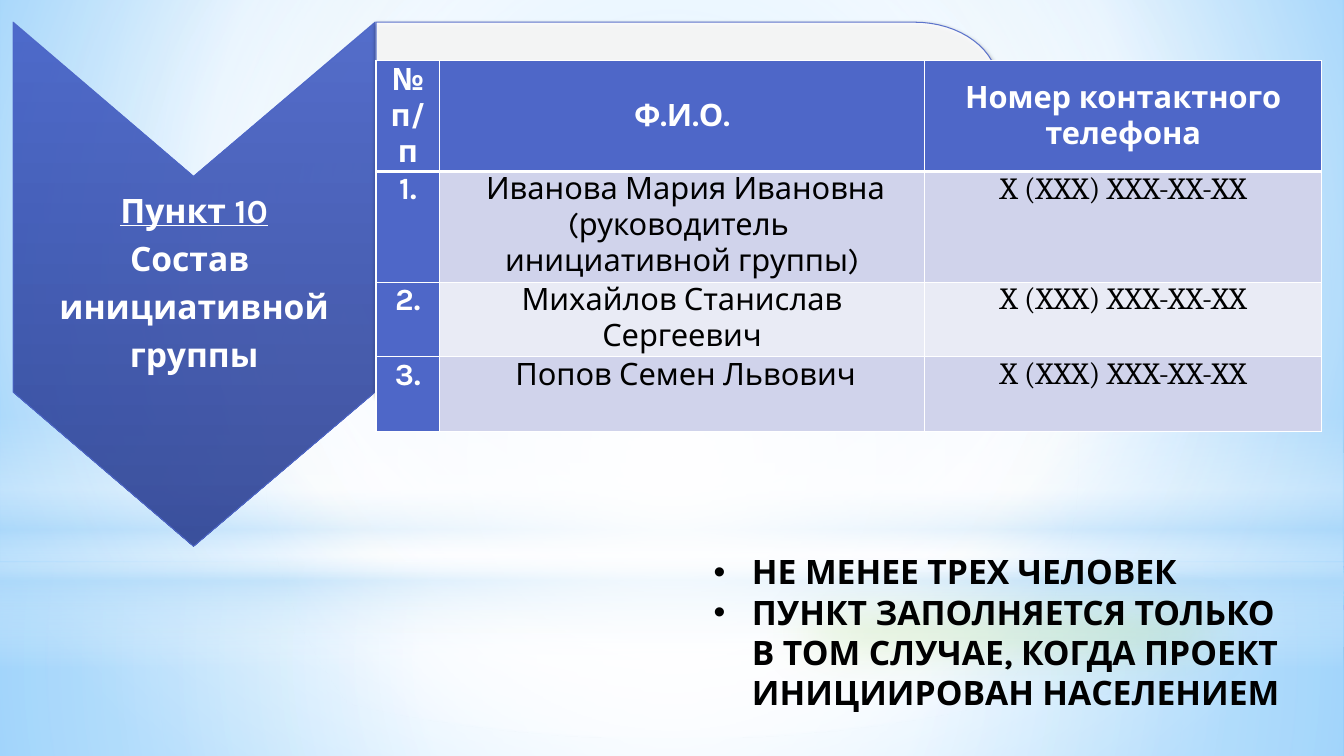
from math import cos, pi, sin

from lxml.etree import SubElement
from pptx import Presentation
from pptx.dml.color import RGBColor
from pptx.enum.shapes import MSO_SHAPE as Preset
from pptx.enum.text import MSO_ANCHOR as Anchor, PP_ALIGN as Align
from pptx.oxml import parse_xml
from pptx.oxml.ns import nsdecls, qn
from pptx.util import Inches, Pt

BLUE, WHITE, BLACK, SKY = "4E67C8", "FFFFFF", "000000", "B4DCFA"
CENTER = (50, 50, 50, 50)
GLOWS = [
    (Preset.RECTANGLE, (0, 5.58, 13.33, 1.92),
     [(0, WHITE, 91), (37, WHITE, 76), (100, SKY, 79)], CENTER),
    (Preset.RECTANGLE, (0, 0, 13.33, 5.58),
     [(0, WHITE, 89), (48, WHITE, 62), (100, SKY, 79)], CENTER),
    (Preset.RECTANGLE, (0, 4.12, 13.33, 2.5),
     [(0, WHITE, 0), (29, WHITE, 30), (45, SKY, 40),
      (55, WHITE, 26), (65, SKY, 60), (100, WHITE, 0)], None),
    (Preset.OVAL, (0, 1.75, 13.33, 5.58),
     [(0, WHITE, 100), (56, WHITE, 0)], CENTER),
]
PHONE = "X (XXX) XXX-XX-XX"
HEADINGS = ["№ п/п", "Ф.И.О.", "Номер контактного телефона"]
MEMBERS = [
    [" Иванова Мария Ивановна", "(руководитель ", "инициативной группы)"],
    ["Михайлов Станислав Сергеевич"],
    [" Попов Семен Львович"],
]


def color(value):
    return RGBColor.from_string(value)


def paint_gradient(owner, fill, stops, focus=None):
    fill.solid()
    solid = owner.element.xpath(".//a:solidFill")[0]
    stop_xml = "".join(
        f'<a:gs pos="{position * 1000}"><a:srgbClr val="{tone}">'
        f'<a:alpha val="{opacity * 1000}"/></a:srgbClr></a:gs>'
        for position, tone, opacity in stops)
    if focus:
        sides = " ".join(f'{side}="{share * 1000}"' for side, share in zip("ltrb", focus))
        direction = f'<a:path path="circle"><a:fillToRect {sides}/></a:path>'
    else:
        direction = '<a:lin ang="5400000" scaled="0"/>'
    gradient = parse_xml(f'<a:gradFill {nsdecls("a")} rotWithShape="1">'
                         f'<a:gsLst>{stop_xml}</a:gsLst>{direction}</a:gradFill>')
    solid.getparent().replace(solid, gradient)


def add_effect(shape, xml):
    shape.element.xpath("./p:spPr/a:effectLst")[0].append(parse_xml(xml))


def add_preset(slide, preset, box):
    shape = slide.shapes.add_shape(preset, *map(Inches, box))
    shape.shadow.inherit = False
    shape.line.fill.background()
    return shape


def add_outline(slide, points):
    corners = [(Inches(x), Inches(y)) for x, y in points]
    builder = slide.shapes.build_freeform(*corners[0], scale=1.0)
    builder.add_line_segments(corners[1:], close=True)
    shape = builder.convert_to_shape()
    shape.shadow.inherit = False
    shape.line.color.rgb = color(BLUE)
    shape.line.width = Pt(0.75)
    return shape


def make_translucent(shape):
    for tone in shape.element.xpath("./p:spPr//a:srgbClr[not(a:alpha)]"):
        SubElement(tone, qn("a:alpha"), val="90000")


def write(frame, lines, size=24, font="Karla", tone=BLACK, bold=True, align=Align.CENTER,
          spacing=None, after=0, underline_first=False, bullet=False):
    frame.word_wrap = True
    for index, line in enumerate(lines):
        paragraph = frame.paragraphs[0] if index == 0 else frame.add_paragraph()
        paragraph.alignment = align
        paragraph.line_spacing = spacing
        paragraph.space_after = Pt(after)
        run = paragraph.add_run()
        run.text = line
        run.font.size = Pt(size)
        run.font.name = font
        run.font.bold = bold
        run.font.underline = underline_first and index == 0
        run.font.color.rgb = color(tone)
        if bullet:
            properties = paragraph._p.get_or_add_pPr()
            properties.set("marL", str(Inches(0.38)))
            properties.set("indent", str(-Inches(0.38)))
            SubElement(properties, qn("a:buFont"), typeface="Arial")
            SubElement(properties, qn("a:buChar"), char="•")


def fill_cell(cell, lines, background, header=False, **text_format):
    cell.margin_left = cell.margin_right = Inches(0.07)
    cell.margin_top = cell.margin_bottom = 0
    cell.vertical_anchor = Anchor.MIDDLE if header else Anchor.TOP
    properties = cell._tc.get_or_add_tcPr()
    for side in "LRTB":
        width = Pt(3 if header and side == "B" else 1)
        properties.append(parse_xml(
            f'<a:ln{side} {nsdecls("a")} w="{width}"><a:solidFill>'
            f'<a:srgbClr val="{WHITE}"/></a:solidFill></a:ln{side}>'))
    cell.fill.solid()
    cell.fill.fore_color.rgb = color(background)
    write(cell.text_frame, lines, size=22, **text_format)


def add_backdrop(slide):
    paint_gradient(slide, slide.background.fill,
                   [(0, "9ED5FF", 100), (60, WHITE, 100), (100, "5BB9FF", 100)],
                   (20, 10, 20, 60))
    for preset, box, stops, focus in GLOWS:
        glow = add_preset(slide, preset, box)
        paint_gradient(glow, glow.fill, stops, focus)


def add_chevron(slide):
    chevron = add_outline(slide, [(3.72, 0.22), (3.72, 3.89), (1.92, 5.42),
                                  (0.13, 3.89), (0.13, 0.22), (1.92, 1.75)])
    paint_gradient(chevron, chevron.fill, [(0, "435EC5", 90), (100, "2B4092", 90)])
    make_translucent(chevron)
    frame = chevron.text_frame
    frame.vertical_anchor = Anchor.MIDDLE
    frame.margin_left = frame.margin_right = Inches(0.02)
    frame.margin_top = frame.margin_bottom = Inches(1.82)
    write(frame, ["Пункт 10", "Состав ", "инициативной", "группы"],
          tone=WHITE, spacing=0.9, after=8.4, underline_first=True)


def add_panel(slide):
    left, top, right, bottom = 3.73, 0.22, 9.9, 3.9
    radius_x, radius_y, steps = 0.83, 0.62, 16
    angles = [pi / 2 * step / steps for step in range(steps + 1)]
    upper = [(right - radius_x * (1 - sin(a)), top + radius_y * (1 - cos(a))) for a in angles]
    lower = [(x, top + bottom - y) for x, y in reversed(upper)]
    panel = add_outline(slide, [(left, top), *upper, *lower, (left, bottom)])
    panel.fill.solid()
    panel.fill.fore_color.rgb = color(WHITE)
    make_translucent(panel)
    add_effect(panel, f'<a:outerShdw {nsdecls("a")} blurRad="{Pt(3.1)}" dist="{Pt(1.8)}" '
                      f'dir="5400000"><a:srgbClr val="{BLACK}"><a:alpha val="45000"/>'
                      '</a:srgbClr></a:outerShdw>')


def add_members(slide):
    box = map(Inches, (3.73, 0.6, 9.38, 3.68))
    table = slide.shapes.add_table(len(MEMBERS) + 1, len(HEADINGS), *box).table
    for column, width in zip(table.columns, (0.63, 4.81, 3.94)):
        column.width = Inches(width)
    for row, height in zip(table.rows, (1.1, 1.1, 0.74, 0.74)):
        row.height = Inches(height)
    for index, heading in enumerate(HEADINGS):
        fill_cell(table.cell(0, index), [heading], BLUE, header=True, tone=WHITE)
    for number, member in enumerate(MEMBERS, 1):
        band = "D0D3EB" if number % 2 else "E9EBF5"
        fill_cell(table.cell(number, 0), [f"{number}."], BLUE, tone=WHITE)
        fill_cell(table.cell(number, 1), member, band, bold=False)
        fill_cell(table.cell(number, 2), [PHONE], band, bold=False, font="Cambria")


def add_requirements(slide):
    requirements = add_preset(slide, Preset.RECTANGLE, (6.98, 5.42, 6.05, 1.72))
    requirements.fill.solid()
    requirements.fill.fore_color.rgb = color("92D050")
    add_effect(requirements, f'<a:softEdge {nsdecls("a")} rad="{Pt(50)}"/>')
    requirements.text_frame.vertical_anchor = Anchor.TOP
    write(requirements.text_frame,
          ["НЕ МЕНЕЕ ТРЕХ ЧЕЛОВЕК",
           "ПУНКТ ЗАПОЛНЯЕТСЯ ТОЛЬКО В ТОМ СЛУЧАЕ, КОГДА ПРОЕКТ ИНИЦИИРОВАН НАСЕЛЕНИЕМ"],
          align=Align.LEFT, bullet=True)


def main():
    deck = Presentation()
    deck.slide_width, deck.slide_height = Inches(13.33), Inches(7.5)
    slide = deck.slides.add_slide(deck.slide_layouts[6])
    add_backdrop(slide)
    add_chevron(slide)
    add_panel(slide)
    add_members(slide)
    add_requirements(slide)
    deck.save("out.pptx")


if __name__ == "__main__":
    main()
